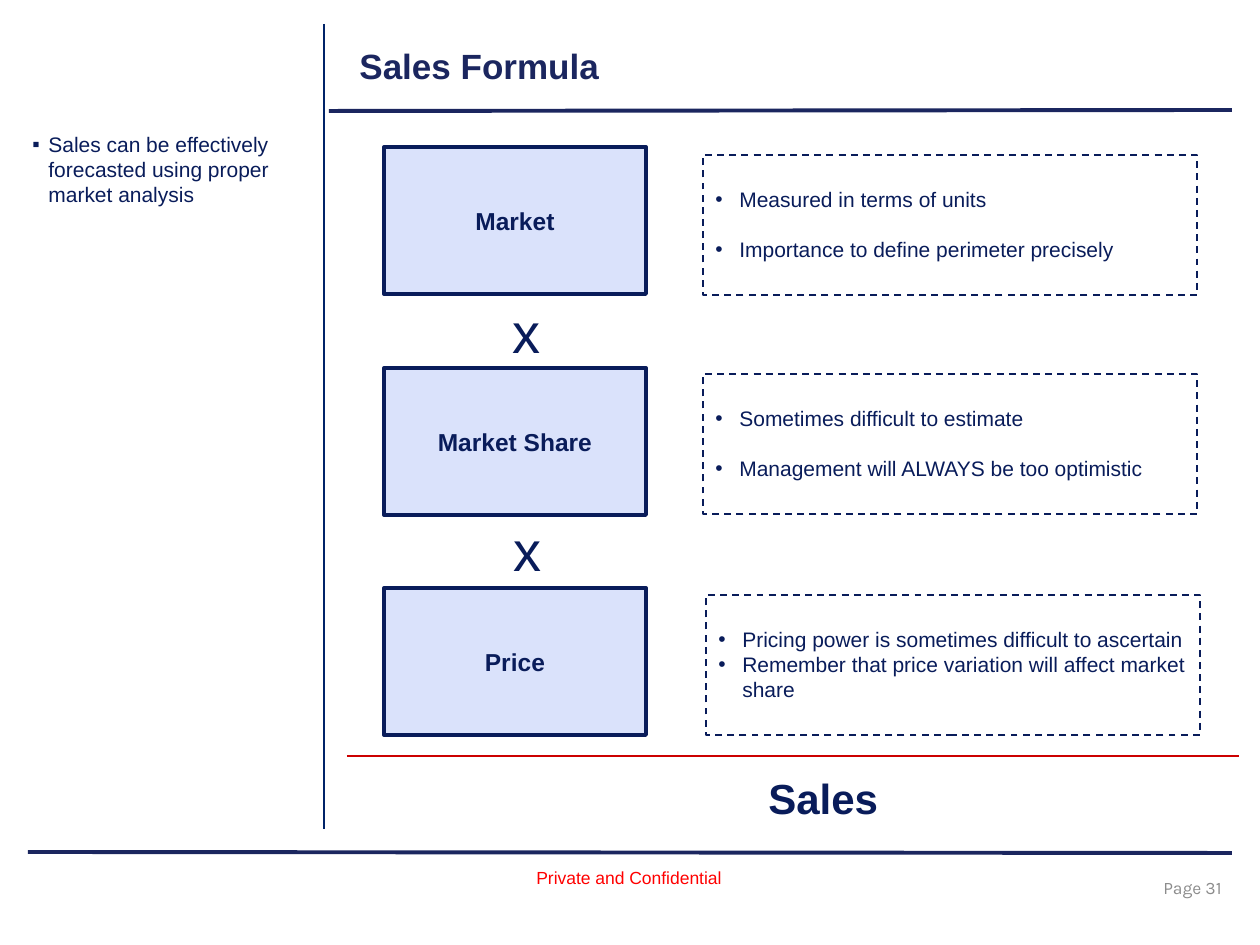
"""Build the Sales Formula slide."""
from collections import namedtuple

from lxml.etree import SubElement
from pptx import Presentation
from pptx.dml.color import RGBColor
from pptx.enum.dml import MSO_LINE
from pptx.enum.shapes import MSO_CONNECTOR, MSO_SHAPE
from pptx.enum.text import MSO_ANCHOR, PP_ALIGN
from pptx.oxml.ns import qn
from pptx.util import Emu, Pt

Theme = namedtuple("Theme", "navy rule divider fill red alert grey small body label title result sign")
theme = Theme(
    navy="091C5A", rule="1B265F", divider="002368", fill="DAE2FB", red="CC0000", alert="FF0000", grey="8C8C8C",
    small=10, body=12, label=14, title=20, result=24, sign=32,
)
SCALE = 914400 / 126


def add_line(start_x, start_y, end_x, end_y, color, width):
    ends = [Emu(round(value * SCALE)) for value in (start_x, start_y, end_x, end_y)]
    connector = slide.shapes.add_connector(MSO_CONNECTOR.STRAIGHT, *ends)
    connector.line.color.rgb = RGBColor.from_string(color)
    connector.line.width = Pt(width)
    SubElement(connector._element.spPr, qn("a:effectLst"))


def add_text(box, lines, size, color=theme.navy, bold=False, font="Arial", align=PP_ALIGN.LEFT,
             anchor=MSO_ANCHOR.TOP, wrap=True, bullet=None, indent=0, spacings=(None, None), outline=None, fill=None):
    frame = [Emu(round(value * SCALE)) for value in box]
    if outline:
        shape = slide.shapes.add_shape(MSO_SHAPE.RECTANGLE, *frame)
        shape.shadow.inherit = False
        shape.line.color.rgb = RGBColor.from_string(theme.navy)
        shape.line.width = Pt(outline)
        if fill:
            shape.fill.solid()
            shape.fill.fore_color.rgb = RGBColor.from_string(fill)
        else:
            shape.fill.background()
            shape.line.dash_style = MSO_LINE.DASH
    else:
        shape = slide.shapes.add_textbox(*frame)
    text_frame = shape.text_frame
    text_frame.word_wrap = wrap
    text_frame.vertical_anchor = anchor
    for index, (line, spacing) in enumerate(zip(lines, spacings)):
        paragraph = text_frame.paragraphs[0] if index == 0 else text_frame.add_paragraph()
        paragraph.alignment = align
        paragraph.line_spacing = spacing
        if bullet:
            properties = paragraph._p.get_or_add_pPr()
            properties.set("marL", str(round(indent * SCALE)))
            properties.set("indent", str(-round(indent * SCALE)))
            SubElement(properties, qn("a:buFont"), typeface="Arial")
            SubElement(properties, qn("a:buChar"), char=bullet)
        run = paragraph.add_run()
        run.text = line
        run.font.name = font
        run.font.size = Pt(size)
        run.font.bold = bold
        run.font.color.rgb = RGBColor.from_string(color)


presentation = Presentation()
presentation.slide_width = Emu(round(1260 * SCALE))
presentation.slide_height = Emu(round(945 * SCALE))
slide = presentation.slides.add_slide(presentation.slide_layouts[6])

add_line(28, 852, 1232, 853, theme.rule, 2.25)
add_text((944, 863, 294, 50), ["Page 31 "], theme.small, theme.grey, font="Karla",
         align=PP_ALIGN.RIGHT, anchor=MSO_ANCHOR.MIDDLE)
add_line(329, 111, 1232, 110, theme.rule, 2.25)
add_text((524, 861, 212, 34), ["Private and Confidential"], theme.small, theme.alert, wrap=False)
add_line(324, 24, 324, 108, theme.divider, 0.75)
add_line(324, 32, 324, 829, theme.divider, 0.75)

add_text((347, 38, 850, 67), ["Sales Formula"], theme.title, theme.rule, bold=True)
add_text((20, 125, 284, 678), ["Sales can be effectively forecasted using proper market analysis"],
         theme.body, bullet="▪", indent=16)

factors = [
    ("Market", 147, 703, 155, (2, 2), ["Measured in terms of units", "Importance to define perimeter precisely"]),
    ("Market Share", 368, 703, 374, (2, 2),
     ["Sometimes difficult to estimate", "Management will ALWAYS be too optimistic"]),
    ("Price", 588, 706, 595, (2, None),
     ["Pricing power is sometimes difficult to ascertain", "Remember that price variation will affect market share"]),
]
for name, top, note_left, note_top, spacings, notes in factors:
    add_text((384, top, 262, 147), [name], theme.label, bold=True, align=PP_ALIGN.CENTER,
             anchor=MSO_ANCHOR.MIDDLE, outline=2.25, fill=theme.fill)
    add_text((note_left, note_top, 494, 140), notes, theme.body, bullet="•", indent=24,
             spacings=spacings, outline=1)

for left, top in ((500, 291), (501, 509)):
    add_text((left, top, 54, 81), ["x"], theme.sign, wrap=False)

add_line(347, 756, 1239, 756, theme.red, 1)
add_text((756, 766, 136, 63), ["Sales"], theme.result, bold=True, wrap=False)

presentation.save("out.pptx")
